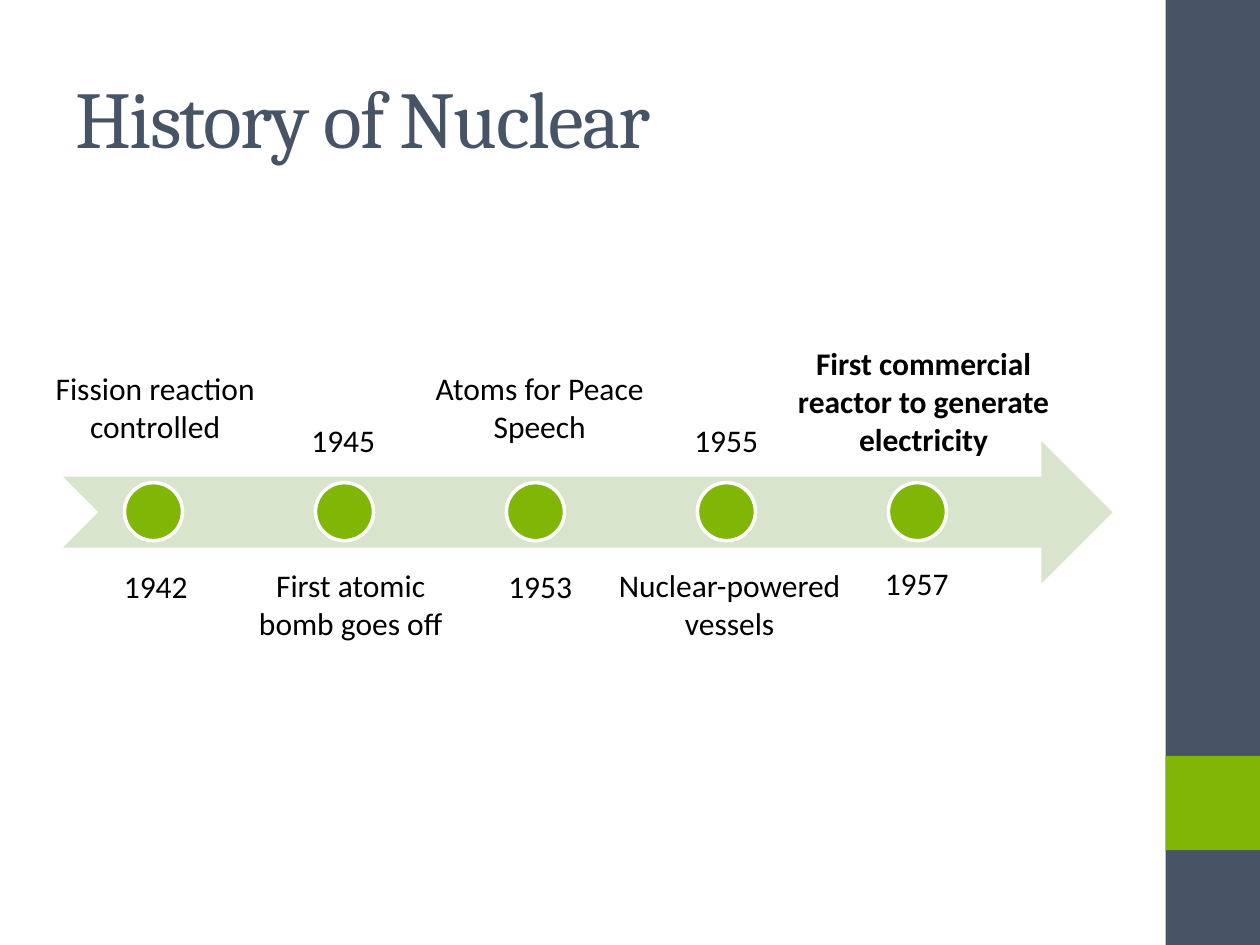
from dataclasses import dataclass
from pptx import Presentation, util as u
from pptx.dml.color import RGBColor as Rgb
from pptx.enum import shapes, text

Cm, Pt = u.Cm, u.Pt
Kind = shapes.MSO_SHAPE


@dataclass(frozen=True)
class Theme:
    slate: Rgb = Rgb.from_string("465466")
    green: Rgb = Rgb.from_string("80B606")
    pale: Rgb = Rgb.from_string("D8E5CC")
    white: Rgb = Rgb.from_string("FFFFFF")
    black: Rgb = Rgb.from_string("000000")
    head: str = "Cambria"
    body: str = "Calibri"
    big: int = 46
    small: int = 18


@dataclass(frozen=True)
class Box:
    left: float
    top: float
    width: float
    height: float

    def place(self) -> tuple:
        return Cm(self.left), Cm(self.top), Cm(self.width), Cm(self.height)


@dataclass(frozen=True)
class Label:
    words: str
    mid: float
    top: float
    width: float = 2.06
    lines: int = 1
    bold: bool = False

    def box(self) -> Box:
        return Box(self.mid - self.width / 2, self.top, self.width,
                   1.02 + 0.78 * (self.lines - 1))


THEME = Theme()
COUNT, STEP, DOT = 5, 3.85, 1.17

# Years and events alternate above and below the arrow
LABELS = [
    Label("1942", 3.14, 11.3),
    Label("Fission reaction\vcontrolled", 3.13, 7.32, 6.81, 2),
    Label("1945", 6.92, 8.36),
    Label("First atomic bomb goes off", 7.07, 11.28, 4.9, 2),
    Label("1953", 10.89, 11.3),
    Label("Atoms for Peace Speech", 10.88, 7.32, 4.9, 2),
    Label("1955", 14.64, 8.36),
    Label("Nuclear-powered\nvessels", 14.71, 11.28, 5.18, 2),
    Label("1957", 18.48, 11.25),
    Label("First commercial reactor to generate electricity",
          18.62, 6.81, 5.84, 3, True),
]


def draw(slide, kind: Kind, box: Box, fill: Rgb, edge: Rgb | None = None) -> None:
    shape = slide.shapes.add_shape(kind, *box.place())
    shape.shadow.inherit = False
    shape.fill.solid()
    shape.fill.fore_color.rgb = fill
    if edge is None:
        shape.line.fill.background()
    else:
        shape.line.color.rgb = edge
        shape.line.width = Pt(2)


def write(slide, words: str, box: Box, face: str, size: int, ink: Rgb,
          bold: bool = False):
    frame = slide.shapes.add_textbox(*box.place()).text_frame
    frame.word_wrap = True
    frame.text = words
    for para in frame.paragraphs:
        font = para.font
        font.name, font.size, font.bold = face, Pt(size), bold
        font.color.rgb = ink
    return frame


def title(slide, words: str) -> None:
    frame = write(slide, words, Box(1.27, 0.76, 21.16, 3.18),
                  THEME.head, THEME.big, THEME.slate)
    frame.vertical_anchor = text.MSO_ANCHOR.MIDDLE
    # Tighten the letters by one point
    for run in frame.paragraphs[0].runs:
        run.font._element.set("spc", "-100")


def label(slide, item: Label) -> None:
    frame = write(slide, item.words, item.box(), THEME.body, THEME.small,
                  THEME.black, item.bold)
    frame.auto_size = text.MSO_AUTO_SIZE.SHAPE_TO_FIT_TEXT
    for para in frame.paragraphs:
        para.alignment = text.PP_ALIGN.CENTER


def main() -> None:
    deck = Presentation()
    deck.slide_width, deck.slide_height = Cm(25.4), Cm(19.05)
    slide = deck.slides.add_slide(deck.slide_layouts[6])

    # Side band
    draw(slide, Kind.RECTANGLE, Box(23.5, 0, 1.9, 19.05), THEME.slate)
    draw(slide, Kind.RECTANGLE, Box(23.5, 15.24, 1.9, 1.9), THEME.green)

    title(slide, "History of Nuclear")

    # Timeline
    draw(slide, Kind.NOTCHED_RIGHT_ARROW, Box(1.27, 8.89, 21.16, 2.87), THEME.pale)
    for i in range(COUNT):
        draw(slide, Kind.OVAL, Box(2.51 + i * STEP, 9.73, DOT, DOT),
             THEME.green, THEME.white)

    for item in LABELS:
        label(slide, item)

    deck.save("out.pptx")


if __name__ == "__main__":
    main()
